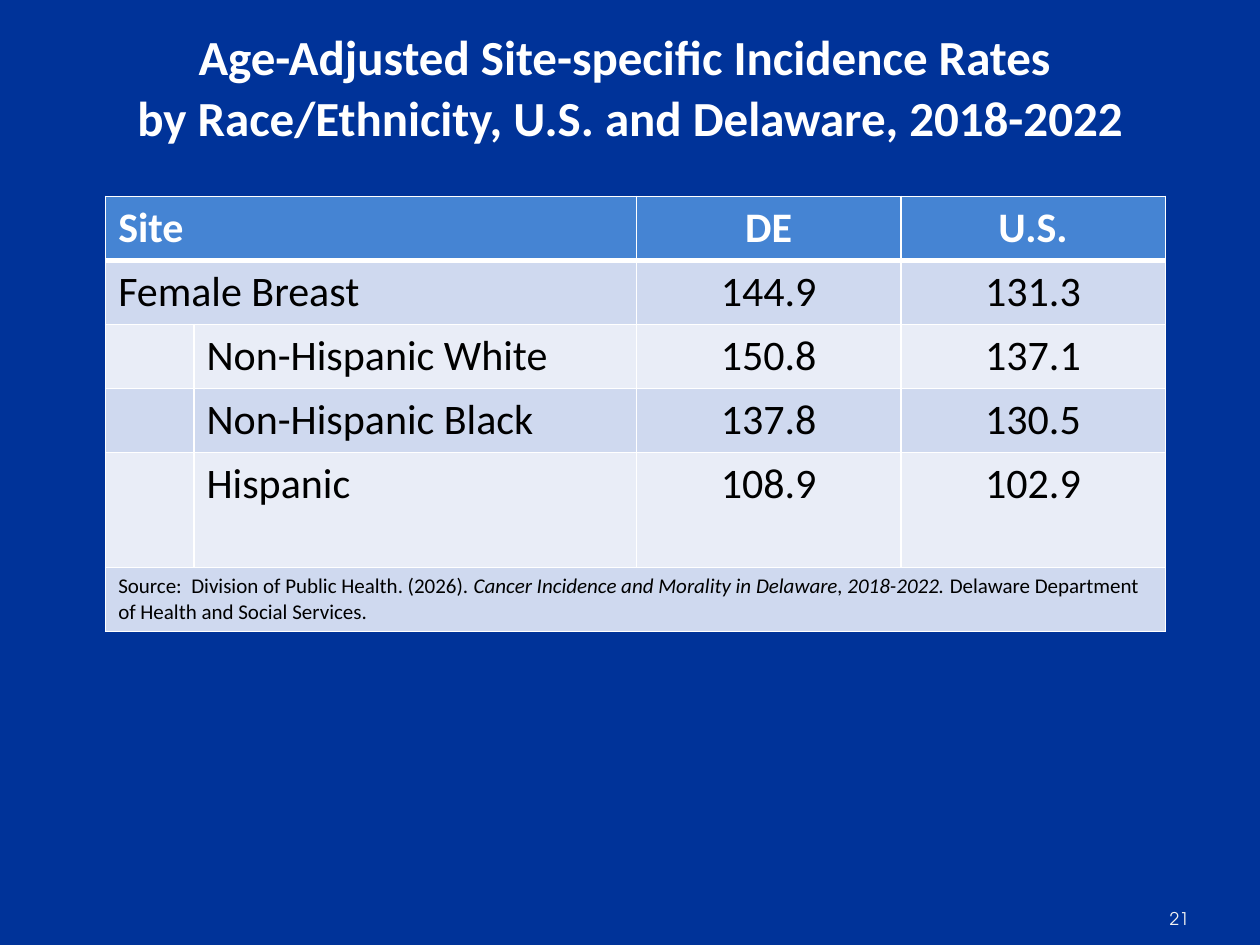
from lxml.etree import SubElement
from pptx import Presentation
from pptx.dml.color import RGBColor
from pptx.enum.text import MSO_ANCHOR, PP_ALIGN
from pptx.oxml.ns import qn
from pptx.util import Cm, Pt

THEME = {
    "background": RGBColor(0x00, 0x33, 0x99),
    "header": RGBColor(0x45, 0x84, 0xD3),
    "bands": [RGBColor(0xCF, 0xD9, 0xEF), RGBColor(0xE9, 0xED, 0xF7)],
    "border": "FFFFFF",
    "title": {"name": "Calibri", "size": Pt(28), "bold": True, "color": RGBColor(255, 255, 255)},
    "head": {"name": "Calibri", "size": Pt(24), "bold": True, "color": RGBColor(255, 255, 255)},
    "body": {"name": "Calibri", "size": Pt(24), "bold": False, "color": RGBColor(0, 0, 0)},
    "source": {"name": "Calibri", "size": Pt(12), "bold": False, "color": RGBColor(0, 0, 0)},
    "number": {"name": "TeX Gyre Adventor", "size": Pt(10), "color": RGBColor(0xF2, 0xF2, 0xF2)},
}


def style(font, values):
    for key, value in values.items():
        if key == "color":
            font.color.rgb = value
        else:
            setattr(font, key, value)


def add_border(cell, side, width):
    ln = SubElement(cell._tc.get_or_add_tcPr(), qn(f"a:ln{side}"), w=str(Pt(width)))
    fill = SubElement(ln, qn("a:solidFill"))
    SubElement(fill, qn("a:srgbClr"), val=THEME["border"])


prs = Presentation()
prs.slide_width, prs.slide_height = Cm(25.4), Cm(19.05)
s = prs.slides.add_slide(prs.slide_layouts[5])
s.background.fill.solid()
s.background.fill.fore_color.rgb = THEME["background"]

title = s.shapes.title
box = {"left": Cm(0), "top": Cm(0.03), "width": Cm(25.4), "height": Cm(3.38)}
for key, value in box.items():
    setattr(title, key, value)
tf = title.text_frame
tf.vertical_anchor = MSO_ANCHOR.MIDDLE
p = tf.paragraphs[0]
p.text = "Age-Adjusted Site-specific Incidence Rates \vby Race/Ethnicity, U.S. and Delaware, 2018-2022"
p.alignment = PP_ALIGN.CENTER
p.line_spacing = Pt(35)
for r in p.runs:
    style(r.font, THEME["title"])

rows = [
    ["Site", "", "DE", "U.S."],
    ["Female Breast", "", "144.9", "131.3"],
    ["", "Non-Hispanic White", "150.8", "137.1"],
    ["", "Non-Hispanic Black", "137.8", "130.5"],
    ["", "Hispanic", "108.9", "102.9"],
    ["", "", "", ""],
]
col_widths = [1.78, 8.92, 5.33, 5.33]
row_heights = [1.29, 1.29, 1.29, 1.29, 2.32, 1.29]
tbl = s.shapes.add_table(
    len(rows), len(col_widths), Cm(2.13), Cm(3.96), Cm(sum(col_widths)), Cm(sum(row_heights))
).table
for col, width in zip(tbl.columns, col_widths):
    col.width = Cm(width)
for row, height in zip(tbl.rows, row_heights):
    row.height = Cm(height)

for i, row in enumerate(rows):
    for j, text in enumerate(row):
        cell = tbl.cell(i, j)
        for side in "LRTB":
            heavy = (i == 0 and side == "B") or (i == 1 and side == "T")
            add_border(cell, side, 3 if heavy else 1)
        cell.fill.solid()
        cell.fill.fore_color.rgb = THEME["bands"][(i - 1) % 2] if i else THEME["header"]
        if text:
            p = cell.text_frame.paragraphs[0]
            p.alignment = PP_ALIGN.CENTER if j > 1 else PP_ALIGN.LEFT
            r = p.add_run()
            r.text = text
            style(r.font, THEME["body" if i else "head"])

for i, last in [(0, 1), (1, 1), (5, 3)]:
    tbl.cell(i, 0).merge(tbl.cell(i, last))

source = [
    ("Source:  Division of Public Health. (2026).", False),
    (" Cancer Incidence and Morality in Delaware, 2018-2022. ", True),
    ("Delaware Department of Health and Social Services.", False),
]
p = tbl.cell(5, 0).text_frame.paragraphs[0]
for text, italic in source:
    r = p.add_run()
    r.text = text
    style(r.font, THEME["source"] | {"italic": italic})

sp = s.shapes.add_textbox(Cm(23.5), Cm(18.01), Cm(1.55), Cm(1.02))
tf = sp.text_frame
frame = {
    "word_wrap": True,
    "vertical_anchor": MSO_ANCHOR.MIDDLE,
    "margin_left": Cm(0.08),
    "margin_right": Cm(0.13),
    "margin_top": Cm(0.13),
    "margin_bottom": Cm(0.13),
}
for key, value in frame.items():
    setattr(tf, key, value)
r = tf.paragraphs[0].add_run()
r.text = "21"
style(r.font, THEME["number"])

prs.save("out.pptx")
